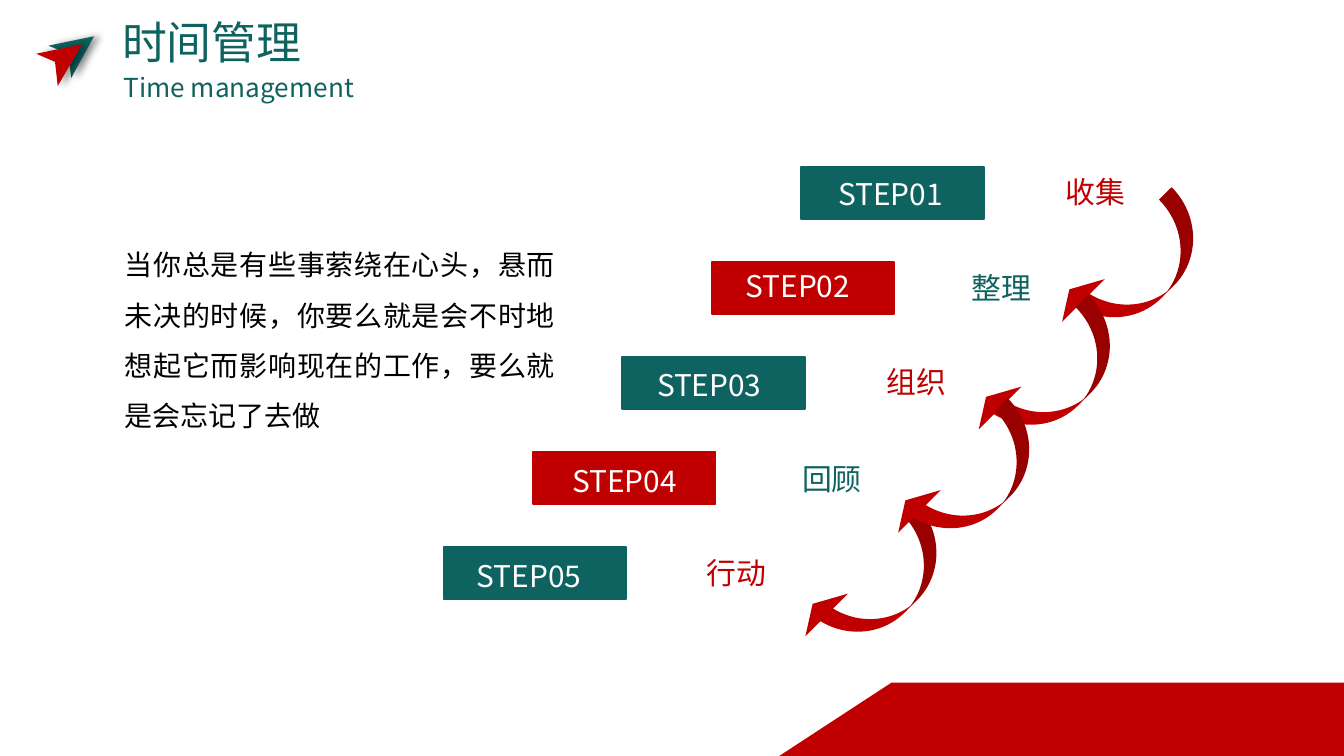
from lxml.etree import SubElement
from pptx import Presentation
from pptx.dml.color import RGBColor
from pptx.enum.shapes import MSO_SHAPE
from pptx.enum.text import MSO_AUTO_SIZE, PP_ALIGN
from pptx.oxml.ns import qn
from pptx.util import Inches, Pt

FONT = "Noto Sans CJK SC"
TEAL = RGBColor(0x0E, 0x62, 0x60)
RED = RGBColor(0xC0, 0x00, 0x00)
WHITE = RGBColor(0xFF, 0xFF, 0xFF)
BLACK = RGBColor(0x00, 0x00, 0x00)

PAGE_WIDTH = 10
PAGE_HEIGHT = PAGE_WIDTH * 9 / 16
STEP_LEFT, STEP_TOP = 5.96, 1.24
STEP_SHIFT, STEP_DROP = 0.665, 0.707
# Position of the step label, then the word and its position
STEPS = [
    ((6.14, 1.26), "收集", (7.83, 1.24)),
    ((5.45, 1.94), "整理", (7.13, 1.96)),
    ((4.79, 2.68), "组织", (6.5, 2.66)),
    ((4.16, 3.39), "回顾", (5.87, 3.38)),
    ((3.45, 4.1), "行动", (5.16, 4.08)),
]
ARROWS = [(8.18, 1.39), (7.56, 2.19), (6.27, 3.73), (6.96, 2.96)]
PLANE_WINGS = [
    ([(0.7, 0.27), (0.53, 0.58), (0.51, 0.4), (0.36, 0.34)], TEAL),
    ([(0.61, 0.33), (0.43, 0.64), (0.41, 0.46), (0.27, 0.4)], RED),
]
BODY = ("当你总是有些事萦绕在心头，悬而未决的时候，你要么就是会不时地"
        "想起它而影响现在的工作，要么就是会忘记了去做")


def add_text(shapes, text, at, size, color, wrap=True, **para_format):
    box = shapes.add_textbox(*map(Inches, at))
    frame = box.text_frame
    frame.word_wrap = wrap
    frame.auto_size = MSO_AUTO_SIZE.SHAPE_TO_FIT_TEXT
    para = frame.paragraphs[0]
    for name, value in para_format.items():
        setattr(para, name, value)
    span = para.add_run()
    span.text = text
    for name, value in {"size": Pt(size), "name": FONT}.items():
        setattr(span.font, name, value)
    span.font.color.rgb = color
    SubElement(span.font._element, qn("a:ea"), typeface=FONT)


def paint(shape, color):
    shape.shadow.inherit = False
    shape.fill.solid()
    shape.fill.fore_color.rgb = color
    shape.line.fill.background()


def add_filled(shapes, kind, at, color, rotation=0):
    shape = shapes.add_shape(kind, *map(Inches, at))
    shape.rotation = rotation
    paint(shape, color)
    return shape


def add_step(page, index, label_at, word, word_at):
    odd = index % 2
    color, word_color = (RED, TEAL) if odd else (TEAL, RED)
    group = page.shapes.add_group_shape()
    left = STEP_LEFT - index * STEP_SHIFT
    top = STEP_TOP + index * STEP_DROP
    plate = add_filled(group.shapes, MSO_SHAPE.RECTANGLE,
                       (left, top, 1.36, 0.39), color)
    plate.line.color.rgb = color
    plate.line.width = Pt(1)
    add_text(group.shapes, f"STEP{index + 1:02}", (*label_at, 0.98, 0.37),
             16, WHITE, wrap=False)
    add_text(page.shapes, word, (*word_at, 0.91, 0.37), 16, word_color)


def add_wing(page, points, color):
    """Draw one wing of the paper plane, with a soft shadow."""
    start, *others = [(Inches(x), Inches(y)) for x, y in points]
    builder = page.shapes.build_freeform(*start)
    builder.add_line_segments(others, close=True)
    wing = builder.convert_to_shape()
    paint(wing, color)
    effects = wing._element.spPr.find(qn("a:effectLst"))
    shadow = SubElement(effects, qn("a:outerShdw"), blurRad=str(Pt(4)),
                        dist=str(Pt(3)), dir="0", rotWithShape="0")
    tint = SubElement(shadow, qn("a:srgbClr"), val=str(BLACK))
    SubElement(tint, qn("a:alpha"), val="40000")


def add_curved_arrow(page, left, top):
    arrow = add_filled(page.shapes, MSO_SHAPE.CURVED_LEFT_ARROW,
                       (left, top, 0.53, 1.3), RED, rotation=45)
    for index, value in enumerate((0.25, 0.846, 0.25)):
        arrow.adjustments[index] = value


def main():
    deck = Presentation()
    deck.slide_width = Inches(PAGE_WIDTH)
    deck.slide_height = Inches(PAGE_HEIGHT)
    page = deck.slides.add_slide(deck.slide_layouts[6])

    add_text(page.shapes, "时间管理", (0.81, 0.06, 2.01, 0.5), 24, TEAL)
    add_text(page.shapes, "Time management", (0.82, 0.48, 1.97, 0.34),
             14, TEAL, wrap=False)
    for index, step in enumerate(STEPS):
        add_step(page, index, *step)
    add_text(page.shapes, BODY, (0.83, 1.67, 3.4, 1.62), 15, BLACK,
             alignment=PP_ALIGN.JUSTIFY, line_spacing=1.5)

    footer = add_filled(page.shapes, MSO_SHAPE.FLOWCHART_MANUAL_INPUT,
                        (7.62, 3.25, 0.55, 4.21), RED, rotation=270)
    footer._element.spPr.xfrm.set("flipH", "1")
    for points, color in PLANE_WINGS:
        add_wing(page, points, color)
    for left, top in ARROWS:
        add_curved_arrow(page, left, top)
    deck.save("out.pptx")


if __name__ == "__main__":
    main()
